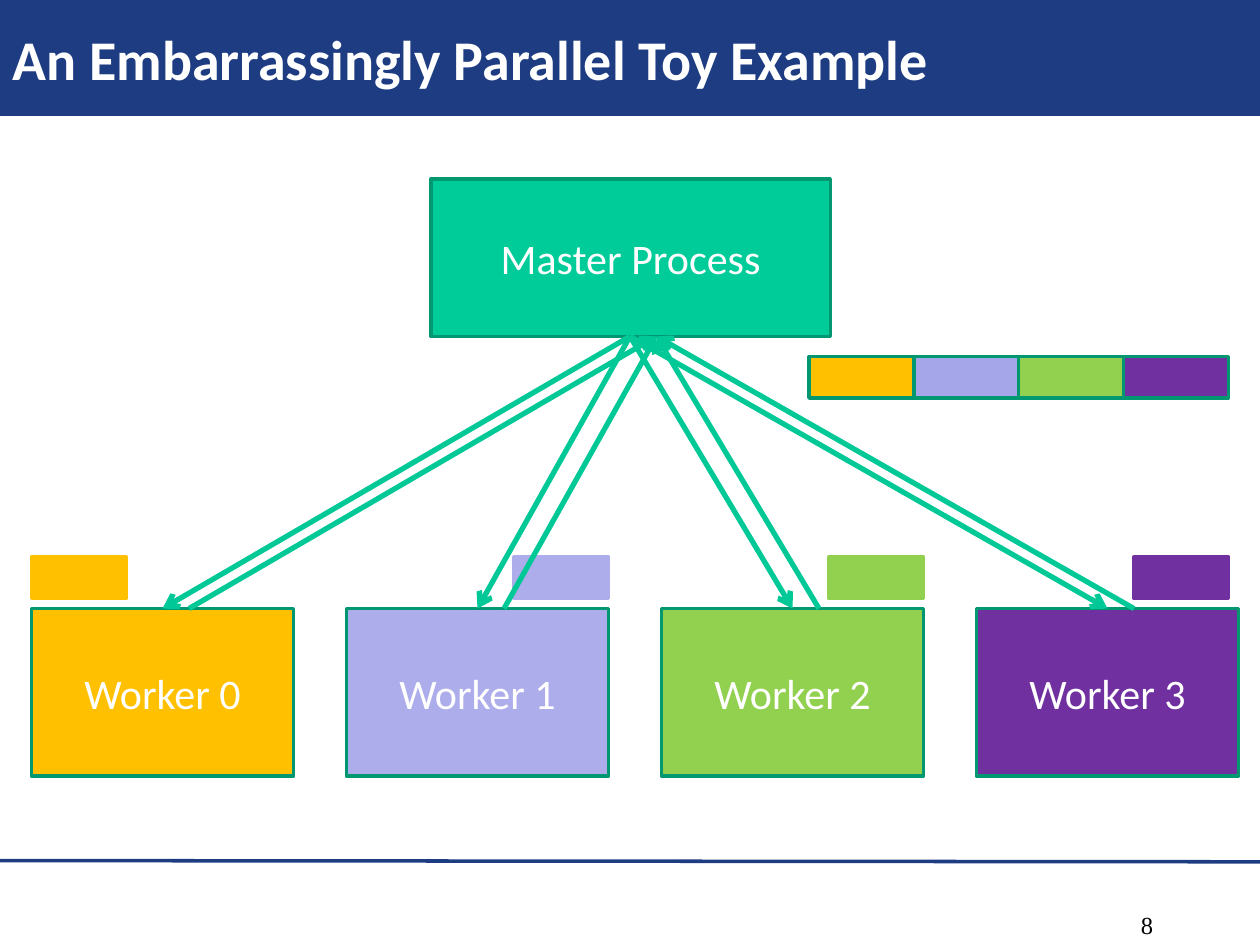
from lxml.etree import SubElement
from pptx import Presentation
from pptx.dml.color import RGBColor
from pptx.enum.shapes import MSO_CONNECTOR, MSO_SHAPE
from pptx.enum.text import MSO_ANCHOR, PP_ALIGN
from pptx.oxml.ns import qn
from pptx.util import Inches, Pt

NAVY = "1E3C82"
WHITE = "FFFFFF"
EDGE = "009771"
ARROW = "00C896"


def color(value):
    return RGBColor.from_string(value)


class Diagram:
    font = "Calibri"

    def __init__(self, slide):
        self.slide = slide

    def add_text(self, frame, text, size, ink, align, font=None, bold=False):
        frame.word_wrap = True
        paragraph = frame.paragraphs[0]
        paragraph.alignment = align
        run = paragraph.add_run()
        run.text = text
        run.font.name = font or self.font
        run.font.size = Pt(size)
        run.font.bold = bold
        run.font.color.rgb = color(ink)

    def title(self, text, width, height):
        title = self.slide.shapes.title
        title.left = title.top = Inches(0)
        title.width, title.height = Inches(width), Inches(height)
        title.fill.solid()
        title.fill.fore_color.rgb = color(NAVY)
        title.text_frame.vertical_anchor = MSO_ANCHOR.MIDDLE
        self.add_text(title.text_frame, text, 32, WHITE, PP_ALIGN.LEFT, bold=True)

    def page_number(self, number, left, top, width, height):
        box = self.slide.shapes.add_textbox(
            Inches(left), Inches(top), Inches(width), Inches(height))
        self.add_text(box.text_frame, number, 14, "000000", PP_ALIGN.RIGHT, "Times New Roman")

    def block(self, left, top, width, height, fill, edge=EDGE, label=None):
        block = self.slide.shapes.add_shape(
            MSO_SHAPE.RECTANGLE, Inches(left), Inches(top), Inches(width), Inches(height))
        block.shadow.inherit = False
        block.fill.solid()
        block.fill.fore_color.rgb = color(fill)
        block.line.color.rgb = color(edge)
        block.line.width = Pt(2)
        if label:
            block.text_frame.vertical_anchor = MSO_ANCHOR.MIDDLE
            self.add_text(block.text_frame, label, 24, WHITE, PP_ALIGN.CENTER)

    def line(self, start, end, ink, width, arrow_end=None):
        line = self.slide.shapes.add_connector(
            MSO_CONNECTOR.STRAIGHT, *map(Inches, start + end))
        line.line.color.rgb = color(ink)
        line.line.width = Pt(width)
        properties = line._element.spPr
        if arrow_end:
            SubElement(properties.find(qn("a:ln")), qn(f"a:{arrow_end}"), type="arrow")
        SubElement(properties, qn("a:effectLst"))


def main():
    deck = Presentation()
    deck.slide_width, deck.slide_height = Inches(10), Inches(7.5)
    diagram = Diagram(deck.slides.add_slide(deck.slide_layouts[5]))

    diagram.line((0, 6.83), (10, 6.84), NAVY, 2)
    diagram.title("An Embarrassingly Parallel Toy Example", 10, 0.92)
    diagram.page_number("8", 7.17, 7.17, 2.08, 0.5)

    master_bottom, worker_top = 2.67, 4.83
    worker_left, worker_pitch, worker_width = 0.25, 2.5, 2.08
    worker_fills = ["FFC000", "ADADEB", "92D050", "7030A0"]
    data_fills = ["FFC000", "A5A5E9", "92D050", "7030A0"]
    data_width = 3.33 / len(data_fills)
    piece_lefts = [0.25, 4.08, 6.58, 9]
    worker_lefts = [worker_left + i * worker_pitch for i in range(len(worker_fills))]
    worker_centers = [left + worker_width / 2 for left in worker_lefts]

    diagram.block(3.42, 1.42, 3.17, 1.25, "00CC99", label="Master Process")
    for i, (left, fill) in enumerate(zip(worker_lefts, worker_fills)):
        diagram.block(left, worker_top, worker_width, 1.33, fill, label=f"Worker {i}")
    for i, fill in enumerate(data_fills):
        diagram.block(6.42 + i * data_width, 2.83, data_width, 0.33, fill)
    for center in worker_centers:
        diagram.line((5, master_bottom), (center, worker_top), ARROW, 3, "tailEnd")
    for left, fill in zip(piece_lefts, worker_fills):
        diagram.block(left, 4.42, 0.75, 0.33, fill, edge=fill)
    for center in worker_centers:
        diagram.line((5.21, master_bottom), (center + 0.21, worker_top), ARROW, 3, "headEnd")

    deck.save("out.pptx")


if __name__ == "__main__":
    main()
